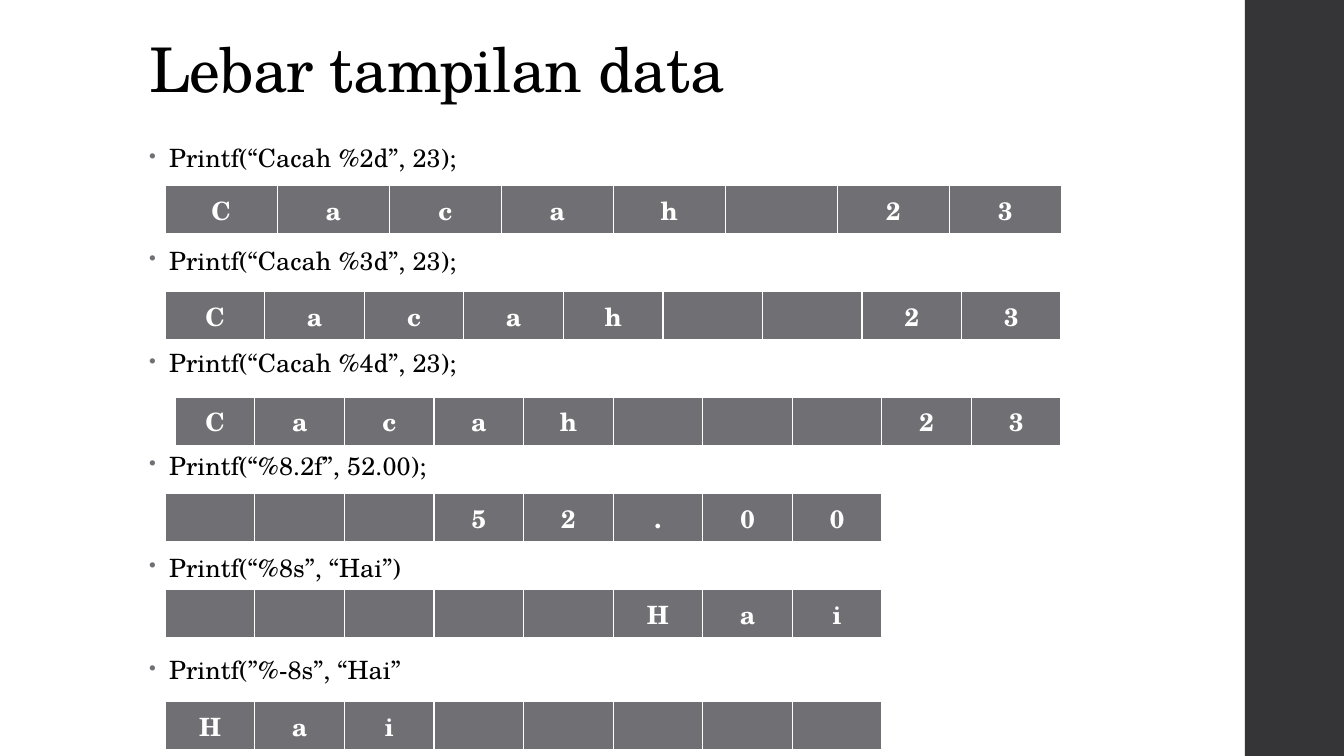
from dataclasses import dataclass

from lxml.etree import SubElement
from pptx import Presentation
from pptx.dml.color import RGBColor
from pptx.enum.shapes import MSO_SHAPE
from pptx.enum.text import MSO_ANCHOR, MSO_AUTO_SIZE, PP_ALIGN
from pptx.oxml.ns import qn
from pptx.slide import Slide
from pptx.table import _Cell
from pptx.text.text import TextFrame, _Paragraph
from pptx.util import Inches, Pt

SLIDE_WIDTH, SLIDE_HEIGHT = Inches(13.333), Inches(7.5)
GRID_COLUMN = SLIDE_WIDTH / 15


@dataclass(frozen=True)
class Theme:
    font: str = "TeX Gyre Schola"
    title_size: int = 44
    text_size: int = 18
    text: str = "000000"
    cell: str = "6F6F74"
    light: str = "FFFFFF"
    sidebar: str = "353537"


@dataclass(frozen=True)
class Example:
    """A printf call and its output, one character a cell."""
    call: str
    output: str
    top: float
    columns: int
    indent: float = 0


THEME = Theme()
TABLE_LEFT = 12.3
EXAMPLES = [
    Example("Printf(“Cacah %2d”, 23);", "Cacah 23", 24.55, 10),
    Example("Printf(“Cacah %3d”, 23);", "Cacah  23", 38.55, 10),
    Example("Printf(“Cacah %4d”, 23);", "Cacah   23", 52.55, 10, 0.11),
    Example("Printf(“%8.2f”, 52.00);", "   52.00", 65.3, 8),
    Example("Printf(“%8s”, “Hai”)", "     Hai", 78, 8),
    Example("Printf(”%-8s”, “Hai”", "Hai     ", 92.8, 8),
]


def across(percent: float) -> int:
    return round(SLIDE_WIDTH * percent / 100)


def down(percent: float) -> int:
    return round(SLIDE_HEIGHT * percent / 100)


def format_runs(para: _Paragraph, size: int, color: str, bold: bool = False, spacing: int = 0) -> None:
    """Style every run; spacing is in hundredths of a point."""
    for span in para.runs:
        span.font.name = THEME.font
        span.font.size = Pt(size)
        span.font.bold = bold
        span.font.color.rgb = RGBColor.from_string(color)
        if spacing:
            span._r.get_or_add_rPr().set("spc", str(spacing))


def prepare_frame(frame: TextFrame) -> None:
    frame.word_wrap = True
    frame.auto_size = MSO_AUTO_SIZE.NONE


def add_bullet(para: _Paragraph) -> None:
    properties = para._p.get_or_add_pPr()
    properties.set("marL", str(Inches(0.2)))
    properties.set("indent", str(-Inches(0.2)))
    color = SubElement(properties, qn("a:buClr"))
    SubElement(color, qn("a:srgbClr"), val=THEME.cell)
    SubElement(properties, qn("a:buSzPct"), val="80000")
    SubElement(properties, qn("a:buChar"), char="•")


def add_sidebar(slide: Slide) -> None:
    bar = slide.shapes.add_shape(MSO_SHAPE.RECTANGLE, across(92.63), 0, across(7.37), SLIDE_HEIGHT)
    bar.shadow.inherit = False
    bar.fill.solid()
    bar.fill.fore_color.rgb = RGBColor.from_string(THEME.sidebar)
    bar.line.fill.background()


def set_title(slide: Slide, text: str) -> None:
    title = slide.shapes.title
    title.left, title.top = across(10.35), 0
    title.width, title.height = across(79.5), down(14.67)
    frame = title.text_frame
    prepare_frame(frame)
    frame.vertical_anchor = MSO_ANCHOR.BOTTOM
    frame.text = text
    para = frame.paragraphs[0]
    para.alignment = PP_ALIGN.LEFT
    para.line_spacing = 0.9
    format_runs(para, THEME.title_size, THEME.text, spacing=-50)


def add_calls(slide: Slide) -> None:
    box = slide.shapes.add_textbox(across(10.35), down(18.53), across(70.5), down(81.47))
    frame = box.text_frame
    prepare_frame(frame)
    frame.text = "\n".join(example.call for example in EXAMPLES)
    for index, para in enumerate(frame.paragraphs):
        add_bullet(para)
        para.line_spacing = 0.95
        para.space_before = Pt(50.6 if index else 0)
        para.space_after = Pt(2)
        format_runs(para, THEME.text_size, THEME.text, spacing=10)


def format_cell(cell: _Cell) -> None:
    properties = cell._tc.get_or_add_tcPr()
    for side, width in {"L": 1, "R": 1, "T": 1, "B": 3}.items():
        border = SubElement(properties, qn(f"a:ln{side}"), w=str(Pt(width)))
        fill = SubElement(border, qn("a:solidFill"))
        SubElement(fill, qn("a:srgbClr"), val=THEME.light)
    cell.fill.solid()
    cell.fill.fore_color.rgb = RGBColor.from_string(THEME.cell)
    para = cell.text_frame.paragraphs[0]
    para.alignment = PP_ALIGN.CENTER
    format_runs(para, THEME.text_size, THEME.light, bold=True)


def add_output(slide: Slide, example: Example) -> None:
    cell_width = GRID_COLUMN * example.columns / len(example.output)
    indent = cell_width * example.indent
    frame = slide.shapes.add_table(
        1, len(example.output), round(across(TABLE_LEFT) + indent), down(example.top),
        round(GRID_COLUMN * example.columns - indent), down(5.4))
    table = frame.table
    for index, character in enumerate(example.output):
        table.columns[index].width = round(cell_width - (0 if index else indent))
        cell = table.cell(0, index)
        cell.text = character.strip()
        format_cell(cell)


def main() -> None:
    deck = Presentation()
    deck.slide_width, deck.slide_height = SLIDE_WIDTH, SLIDE_HEIGHT
    page = deck.slides.add_slide(deck.slide_layouts[5])
    add_sidebar(page)
    set_title(page, "Lebar tampilan data")
    add_calls(page)
    for example in EXAMPLES:
        add_output(page, example)
    deck.save("out.pptx")


if __name__ == "__main__":
    main()
